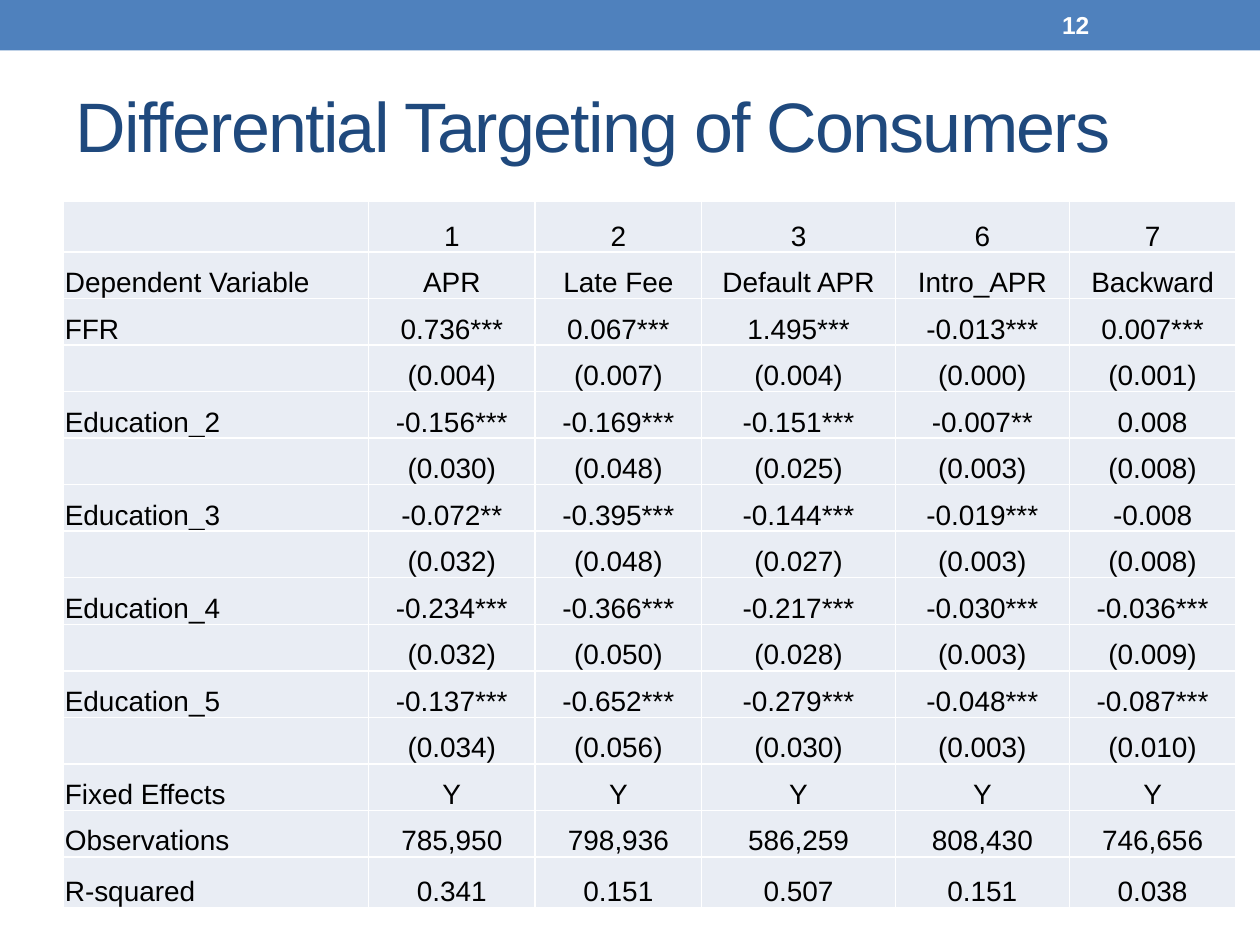
from typing import NamedTuple

from lxml import etree
from pptx import Presentation
from pptx.dml.color import RGBColor
from pptx.enum.shapes import MSO_SHAPE
from pptx.enum.text import MSO_ANCHOR, MSO_AUTO_SIZE, PP_ALIGN
from pptx.oxml.ns import qn
from pptx.util import Pt

RECT = MSO_SHAPE.RECTANGLE
MIDDLE, BOTTOM = MSO_ANCHOR.MIDDLE, MSO_ANCHOR.BOTTOM
LEFT, CENTER = PP_ALIGN.LEFT, PP_ALIGN.CENTER
NO_FIT = MSO_AUTO_SIZE.NONE

FONT = "Arial"
BLUE, NAVY, PALE = "4F81BD", "1F497D", "E9EDF4"
WHITE, BLACK = "FFFFFF", "000000"


class Box(NamedTuple):
    left: float
    top: float
    width: float
    height: float


class Style(NamedTuple):
    size: float
    color: str
    bold: bool = False
    spacing: float = 0


class Effect(NamedTuple):
    name: str
    values: str
    errors: str


TITLE = Style(40, NAVY, spacing=-1)
NUMBER = Style(14, WHITE, bold=True)
BODY = Style(16, BLACK)

# Table content
HEAD = [
    ["", "1", "2", "3", "6", "7"],
    ["Dependent Variable", "APR", "Late Fee", "Default APR", "Intro_APR", "Backward"],
]
EFFECTS = [
    Effect("FFR", "0.736*** 0.067*** 1.495*** -0.013*** 0.007***",
           "0.004 0.007 0.004 0.000 0.001"),
    Effect("Education_2", "-0.156*** -0.169*** -0.151*** -0.007** 0.008",
           "0.030 0.048 0.025 0.003 0.008"),
    Effect("Education_3", "-0.072** -0.395*** -0.144*** -0.019*** -0.008",
           "0.032 0.048 0.027 0.003 0.008"),
    Effect("Education_4", "-0.234*** -0.366*** -0.217*** -0.030*** -0.036***",
           "0.032 0.050 0.028 0.003 0.009"),
    Effect("Education_5", "-0.137*** -0.652*** -0.279*** -0.048*** -0.087***",
           "0.034 0.056 0.030 0.003 0.010"),
]
FOOT = [
    ["Fixed Effects"] + ["Y"] * 5,
    ["Observations", "785,950", "798,936", "586,259", "808,430", "746,656"],
    ["R-squared", "0.341", "0.151", "0.507", "0.151", "0.038"],
]
WIDTHS = [174.2, 95.2, 95.2, 110.7, 99.4, 95.2]
TALL, SHORT = 28.8, 26.6


def rgb(color: str) -> RGBColor:
    return RGBColor.from_string(color)


def place(shape, box: Box) -> None:
    shape.left, shape.top, shape.width, shape.height = map(Pt, box)


def add_run(para, text: str, style: Style) -> None:
    run = para.add_run()
    run.text = text
    font = run.font
    font.name, font.size, font.bold = FONT, Pt(style.size), style.bold
    font.color.rgb = rgb(style.color)
    if style.spacing:
        run._r.get_or_add_rPr().set("spc", str(int(style.spacing * 100)))


def fill_frame(frame, text: str, style: Style) -> None:
    frame.word_wrap = True
    frame.auto_size = NO_FIT
    frame.vertical_anchor = MIDDLE
    para = frame.paragraphs[0]
    para.alignment = LEFT
    add_run(para, text, style)


def add_edges(cell, color: str, width: float) -> None:
    props = cell._tc.get_or_add_tcPr()
    for spot, side in enumerate(("lnL", "lnR", "lnT", "lnB")):
        line = etree.Element(qn(f"a:{side}"), w=str(int(Pt(width))))
        fill = etree.SubElement(line, qn("a:solidFill"))
        etree.SubElement(fill, qn("a:srgbClr"), val=color)
        props.insert(spot, line)


def fill_cell(cell, text: str, align) -> None:
    cell.fill.solid()
    cell.fill.fore_color.rgb = rgb(PALE)
    cell.margin_left = cell.margin_right = cell.margin_top = Pt(0.7)
    cell.margin_bottom = 0
    cell.vertical_anchor = BOTTOM
    add_edges(cell, WHITE, 1)
    para = cell.text_frame.paragraphs[0]
    para.alignment = align
    if text:
        add_run(para, text, BODY)


def list_rows() -> list[list[str]]:
    rows = list(HEAD)
    for item in EFFECTS:
        rows.append([item.name, *item.values.split()])
        rows.append(["", *(f"({err})" for err in item.errors.split())])
    return rows + FOOT


def add_grid(slide, left: float, top: float) -> None:
    rows = list_rows()
    heights = [TALL] + [SHORT] * (len(rows) - 2) + [TALL]
    box = Box(left, top, sum(WIDTHS), sum(heights))
    grid = slide.shapes.add_table(len(rows), len(WIDTHS), *map(Pt, box)).table
    grid.first_row = grid.horz_banding = False
    for col, width in zip(grid.columns, WIDTHS):
        col.width = Pt(width)
    for row, height, texts in zip(grid.rows, heights, rows):
        row.height = Pt(height)
        for idx, (cell, text) in enumerate(zip(row.cells, texts)):
            fill_cell(cell, text, CENTER if idx else LEFT)


def main() -> None:
    deck = Presentation()
    deck.slide_width, deck.slide_height = Pt(720), Pt(540)
    slide = deck.slides.add_slide(deck.slide_layouts[5])

    # Top band
    band = slide.shapes.add_shape(RECT, *map(Pt, Box(0, 0, 720, 28.8)))
    band.shadow.inherit = False
    band.fill.solid()
    band.fill.fore_color.rgb = rgb(BLUE)
    band.line.fill.background()

    # Page number
    page = slide.shapes.add_textbox(*map(Pt, Box(599.8, 1.4, 84.2, 25.9)))
    fill_frame(page.text_frame, "12", NUMBER)

    # Title
    title = slide.shapes.title
    place(title, Box(36, 41.8, 648, 58.3))
    fill_frame(title.text_frame, "Differential Targeting of Consumers", TITLE)

    # Regression table
    add_grid(slide, 36.4, 115.2)

    deck.save("out.pptx")


if __name__ == "__main__":
    main()
